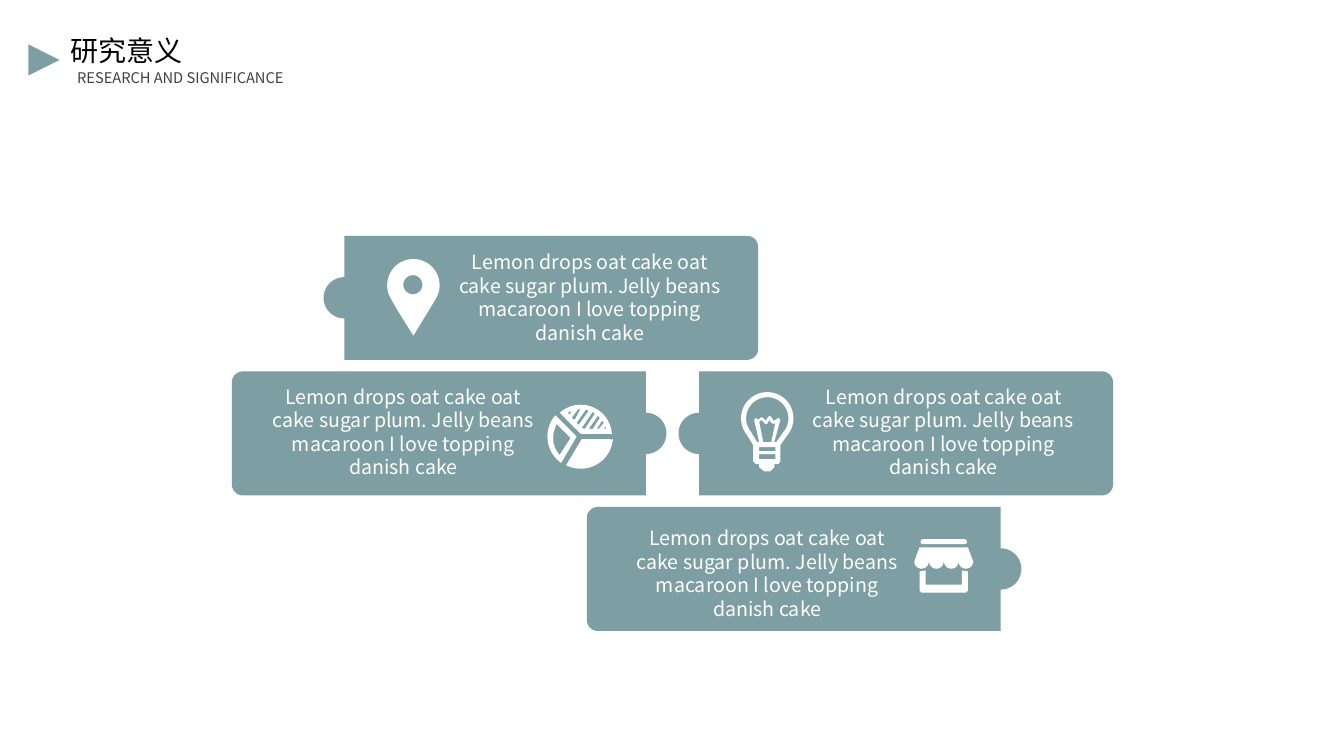
import math
import pptx
import pptx.dml.color
import pptx.enum.shapes
import pptx.enum.text
import pptx.oxml.ns
import pptx.util
from lxml import etree

# Content
TITLE = "研究意义"
SUB = "RESEARCH AND SIGNIFICANCE"
BODY = ("Lemon drops oat cake oat cake sugar plum. Jelly beans "
        "macaroon I love topping danish cake")
# Column, row, side of the knob, icon, icon offset, text offset
TILES = [
    (0, 0, "left", "pin", (0.63, 0.23), (1.33, 0.14)),
    (0, 1, "right", "pie", (3.13, 0.33), (0.39, 0.13)),
    (1, 1, "left", "bulb", (0.62, 0.21), (1.32, 0.13)),
    (1, 2, "right", "shop", (3.25, 0.32), (0.48, 0.19)),
]
HEX = {"teal": "7D9EA3", "white": "FFFFFF", "black": "000000", "gray": "404040"}
FONT = "Noto Sans CJK SC"

# Grid, in inches
WIDE, HIGH = 13.33, 7.5
LEFT, TOP = 2.3, 2.34
COL, ROW, SHIFT = 3.52, 1.345, 0.91
TEXT = (2.62, 1.21)


def arc(x, y, rad, start, end):
    """Points along a circle, angles in degrees, clockwise from the right."""
    count = max(6, round(abs(end - start) / 6))
    turns = [math.radians(start + (end - start) * i / count) for i in range(count + 1)]
    return [(x + rad * math.cos(t), y + rad * math.sin(t)) for t in turns]


def box(x, y, w, h):
    return [(x, y), (x + w, y), (x + w, y + h), (x, y + h)]


# Shapes in hundredths of an inch: each part is a list of closed outlines
TILE_W, TILE_H, KNOB, ROUND = 431, 123, 20.5, 11
TILE = ([(KNOB, 0)] + arc(TILE_W - ROUND, ROUND, ROUND, -90, 0)
        + arc(TILE_W - ROUND, TILE_H - ROUND, ROUND, 0, 90)
        + [(KNOB, TILE_H)] + arc(KNOB, TILE_H / 2, KNOB, 90, 270))

PIN = [[
    arc(26, 26, 26, 150, 390) + [(37, 58), (26, 76), (11, 52)],
    arc(25.5, 25.5, 9.5, 0, 360),
]]

PIE = [
    [
        [(33, 29)] + arc(33, 31, 31, 228, 356),
        [(29, 18), (31, 20), (41, 6), (38, 5)],
        [(33, 4), (30, 5), (24, 13), (27, 15)],
        [(24, 6), (20, 8), (22, 10)],
        [(49, 24), (51, 24), (56, 18), (54, 16)],
        [(56, 24), (58, 24), (58, 21)],
        [(41, 24), (45, 24), (52, 13), (50, 11)],
        [(37, 24), (47, 9), (45, 7), (34, 23)],
    ],
    [
        [(29, 31.5)] + arc(32, 31.5, 32, 125, 221),
        [(23, 33), (9, 19), (6, 28), (6, 38), (8, 44), (12, 50)],
    ],
    [[(34, 34)] + arc(33, 31.5, 32, 5, 117)],
]

BULB = [[
    arc(26, 25.5, 26, 140, 400)
    + [(39, 52), (39, 68), (37, 71), (33, 71), (33, 74), (29, 78), (23, 78),
       (18, 74), (18, 71), (15, 71), (12, 68), (12, 52)],
    [(35, 49)] + arc(26, 25.5, 21, 40, -220)
    + [(16, 49), (18, 49), (13, 27), (15, 25), (17, 27), (20, 24.5), (22, 25),
       (24, 28), (28, 23), (30, 24), (32, 28), (35, 26.5), (37, 25), (39, 27),
       (33, 49)],
    [(22, 49), (30, 49), (34, 30), (32, 31), (30, 30), (28, 27), (26, 31),
     (24, 31), (20, 27), (18, 29)],
    box(18, 54, 16, 4),
    box(18, 61, 16, 5),
]]

WAVES = [p for x in (51, 36.5, 21.75, 7) for p in arc(x, 22, 7.2, 0, 180)]
SHOP = [[
    [(5, 8), (53, 8)] + WAVES,
    arc(49.5, 2.5, 2.5, -90, 90) + arc(8.5, 2.5, 2.5, 90, 270),
    [(5, 32), (11, 31), (11, 45), (47, 45), (47, 31), (53, 32), (53, 51),
     (51, 53), (7, 53), (5, 51)],
]]
ICONS = {"pin": PIN, "pie": PIE, "bulb": BULB, "shop": SHOP}


def inch(*sizes):
    return [pptx.util.Inches(s) for s in sizes]


def tint(name):
    return pptx.dml.color.RGBColor.from_string(HEX[name])


def paint(shape, color):
    shape.shadow.inherit = False
    shape.fill.solid()
    shape.fill.fore_color.rgb = tint(color)
    shape.line.fill.background()


def draw(slide, left, top, part, color):
    """Draw one part, with its holes, at a point given in inches."""
    unit = pptx.util.Inches(0.01)
    loops = [[(x * unit, y * unit) for x, y in loop] for loop in part]
    pen = slide.shapes.build_freeform(*loops[0][0], scale=1.0)
    for i, loop in enumerate(loops):
        if i:
            pen.move_to(*loop[0])
        pen.add_line_segments(loop[1:], close=True)
    paint(pen.convert_to_shape(*inch(left, top)), color)


def write(frame, words, size, color, align):
    para = frame.paragraphs[0]
    para.alignment = align
    run = para.add_run()
    run.text = words
    run.font.size = pptx.util.Pt(size)
    run.font.name = FONT
    run.font.color.rgb = tint(color)
    east = etree.SubElement(run.font._element, pptx.oxml.ns.qn("a:ea"))
    east.set("typeface", FONT)
    return para


def main():
    deck = pptx.Presentation()
    deck.slide_width, deck.slide_height = inch(WIDE, HIGH)
    slide = deck.slides.add_slide(deck.slide_layouts[5])
    align = pptx.enum.text.PP_ALIGN

    # Heading
    mark = slide.shapes.add_shape(
        pptx.enum.shapes.MSO_SHAPE.ISOSCELES_TRIANGLE, *inch(0.28, 0.44, 0.31, 0.31))
    mark.rotation = 90
    paint(mark, "teal")
    title = slide.shapes.title
    title.left, title.top, title.width, title.height = inch(0.6, 0.28, 3.83, 0.44)
    frame = title.text_frame
    frame.auto_size = pptx.enum.text.MSO_AUTO_SIZE.NONE
    frame.vertical_anchor = pptx.enum.text.MSO_ANCHOR.TOP
    write(frame, TITLE, 20, "black", align.LEFT)
    note = slide.shapes.add_textbox(*inch(0.59, 0.63, 2.4, 0.28))
    note.text_frame.word_wrap = False
    write(note.text_frame, SUB, 10.5, "gray", align.CENTER)

    # Puzzle tiles with icon and text
    for col, row, side, icon, spot, start in TILES:
        left = LEFT + col * COL + (SHIFT if side == "left" else 0)
        top = TOP + row * ROW
        tile = TILE if side == "left" else [(TILE_W - x, y) for x, y in TILE]
        draw(slide, left, top, [tile], "teal")
        for part in ICONS[icon]:
            draw(slide, left + spot[0], top + spot[1], part, "white")
        label = slide.shapes.add_textbox(*inch(left + start[0], top + start[1], *TEXT))
        frame = label.text_frame
        frame.word_wrap = True
        frame.margin_left = frame.margin_right = 0
        frame.margin_top = frame.margin_bottom = 0
        para = write(frame, BODY, 14, "white", align.CENTER)
        para.line_spacing = pptx.util.Pt(16.8)

    deck.save("out.pptx")


if __name__ == "__main__":
    main()
